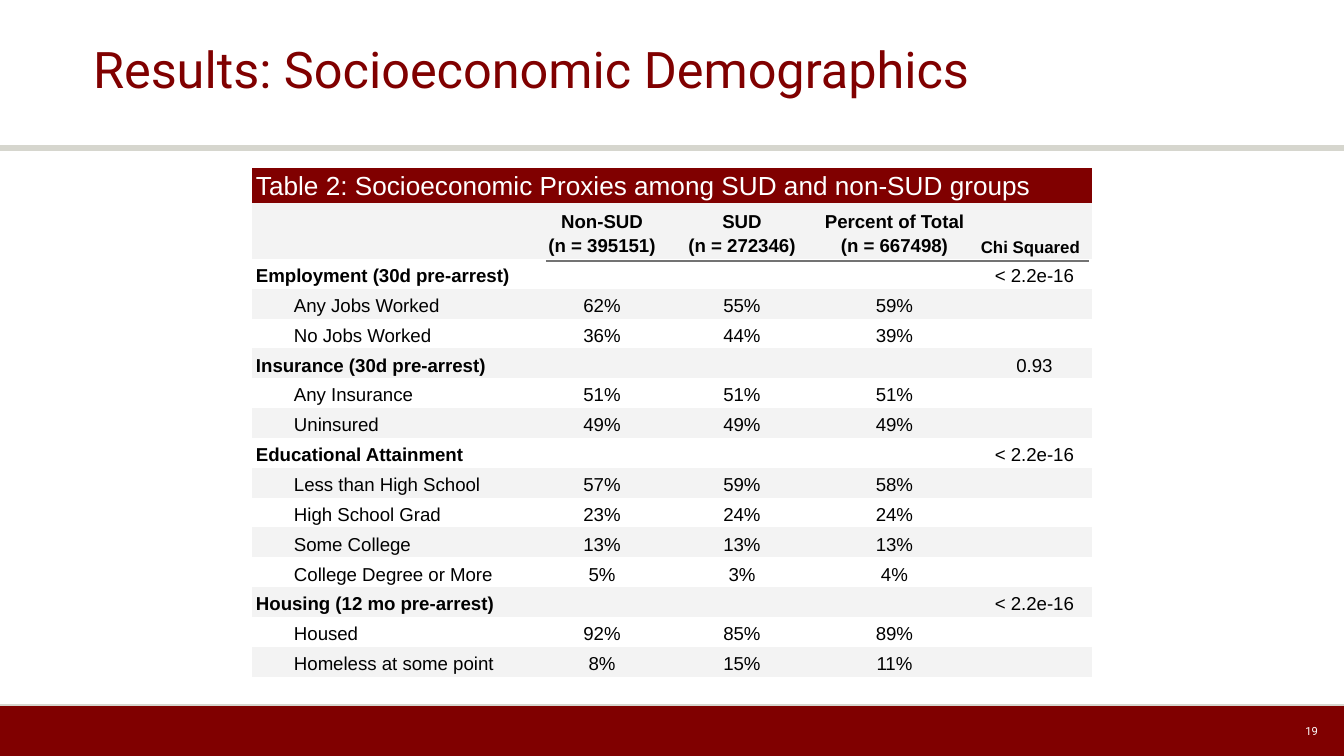
from lxml import etree
from pptx import Presentation
from pptx.dml.color import RGBColor
from pptx.enum.shapes import MSO_CONNECTOR, MSO_SHAPE
from pptx.enum.text import MSO_ANCHOR, PP_ALIGN
from pptx.oxml.ns import qn
from pptx.util import Emu, Pt

STRAIGHT = MSO_CONNECTOR.STRAIGHT
RECTANGLE = MSO_SHAPE.RECTANGLE
MIDDLE, BOTTOM = MSO_ANCHOR.MIDDLE, MSO_ANCHOR.BOTTOM
LEFT, CENTER, RIGHT = PP_ALIGN.LEFT, PP_ALIGN.CENTER, PP_ALIGN.RIGHT

MAROON = RGBColor(0x80, 0x00, 0x00)
STONE = RGBColor(0xD6, 0xD6, 0xCE)
GRAY = RGBColor(0x73, 0x73, 0x73)
BAND = RGBColor(0xF3, 0xF3, 0xF3)
WHITE = RGBColor(0xFF, 0xFF, 0xFF)
BLACK = RGBColor(0x00, 0x00, 0x00)

WIDTH, HEIGHT = 1344, 756
EMU_PER_PX = 9144000 / WIDTH
NO_STYLE = "{2D5ABB26-0587-4C30-8999-92F81FD0307C}"

COLUMN_WIDTHS = [38, 242, 140, 140, 165, 115]
CAPTION_HEIGHT, HEADER_HEIGHT = 35, 53
CAPTION = "Table 2: Socioeconomic Proxies among SUD and non-SUD groups"
GROUP_HEADERS = [
    ("Non-SUD", "(n = 395151)"),
    ("SUD", "(n = 272346)"),
    ("Percent of Total", "(n = 667498)"),
]
SECTIONS = [
    ("Employment (30d pre-arrest)", "< 2.2e-16", [
        ("Any Jobs Worked", "62%", "55%", "59%"),
        ("No Jobs Worked", "36%", "44%", "39%"),
    ]),
    ("Insurance (30d pre-arrest)", "0.93", [
        ("Any Insurance", "51%", "51%", "51%"),
        ("Uninsured", "49%", "49%", "49%"),
    ]),
    ("Educational Attainment", "< 2.2e-16", [
        ("Less than High School", "57%", "59%", "58%"),
        ("High School Grad", "23%", "24%", "24%"),
        ("Some College", "13%", "13%", "13%"),
        ("College Degree or More", "5%", "3%", "4%"),
    ]),
    ("Housing (12 mo pre-arrest)", "< 2.2e-16", [
        ("Housed", "92%", "85%", "89%"),
        ("Homeless at some point", "8%", "15%", "11%"),
    ]),
]


def px(length):
    return Emu(round(length * EMU_PER_PX))


def add_line(slide, left, right, y, color, weight):
    line = slide.shapes.add_connector(STRAIGHT, px(left), px(y), px(right), px(y))
    line.line.color.rgb = color
    line.line.width = Pt(weight)
    etree.SubElement(line._element.spPr, qn("a:effectLst"))


def write(paragraph, text, size, color, font="Arial", bold=False, align=LEFT, spacing=1.0):
    paragraph.alignment = align
    paragraph.line_spacing = spacing
    run = paragraph.add_run()
    run.text = text
    run.font.size = Pt(size)
    run.font.name = font
    run.font.bold = bold
    run.font.color.rgb = color


def set_margins(box, side, end):
    box.margin_left = box.margin_right = px(side)
    box.margin_top = box.margin_bottom = px(end)


def add_label(slide, box, text, size, color, align=LEFT, side=0, spacing=1.0):
    """Roboto text, centred vertically in its box."""
    frame = slide.shapes.add_textbox(*map(px, box)).text_frame
    frame.word_wrap = True
    frame.vertical_anchor = MIDDLE
    set_margins(frame, side, 5)
    write(frame.paragraphs[0], text, size, color, "Roboto", align=align, spacing=spacing)


def add_heading(slide, left, top, width, height):
    add_label(slide, (left + 93, top, width - 186, height - 3),
              "Results: Socioeconomic Demographics", 27, MAROON, spacing=0.9)
    add_line(slide, left, left + width, top + height, STONE, 3)


def add_footer(slide, left, top, width, height):
    bar = slide.shapes.add_shape(RECTANGLE, *map(px, (left, top, width, height)))
    bar.shadow.inherit = False
    bar.fill.solid()
    bar.fill.fore_color.rgb = MAROON
    bar.line.fill.background()
    add_line(slide, left, left + width, top, STONE, 0.75)
    add_label(slide, (left + width - 395, top + 6, 379, 40), "19", 6, WHITE, RIGHT, side=10)


def fill_cell(cell, *lines, size=10, bold=False, align=LEFT):
    """Write the lines as paragraphs at the cell's foot."""
    for number, text in enumerate(lines):
        frame = cell.text_frame
        paragraph = frame.add_paragraph() if number else frame.paragraphs[0]
        write(paragraph, text, size, BLACK, bold=bold, align=align, spacing=1.15)


def prepare_cell(cell, color):
    cell.fill.solid()
    cell.fill.fore_color.rgb = color
    cell.vertical_anchor = BOTTOM
    set_margins(cell, 4, 2)
    # Keeps empty cells from stretching their row
    end = etree.SubElement(cell.text_frame.paragraphs[0]._p, qn("a:endParaRPr"))
    end.set("sz", "1000")


def add_demographics_table(slide, left, top):
    body_rows = sum(1 + len(items) for _, _, items in SECTIONS)
    heights = [CAPTION_HEIGHT, HEADER_HEIGHT] + [29 + i % 2 for i in range(body_rows)]
    width = sum(COLUMN_WIDTHS)
    table = slide.shapes.add_table(
        len(heights), len(COLUMN_WIDTHS),
        px(left), px(top), px(width), px(sum(heights))).table
    table.first_row = table.horz_banding = False
    table._tbl.tblPr.find(qn("a:tableStyleId")).text = NO_STYLE

    for column, column_width in zip(table.columns, COLUMN_WIDTHS):
        column.width = px(column_width)
    for index, (row, height) in enumerate(zip(table.rows, heights)):
        row.height = px(height)
        color = MAROON if index == 0 else BAND if index % 2 else WHITE
        for cell in row.cells:
            prepare_cell(cell, color)

    table.cell(0, 0).merge(table.cell(0, 5))
    write(table.cell(0, 0).text_frame.paragraphs[0], CAPTION, 14, WHITE)
    for column, header in enumerate(GROUP_HEADERS, 2):
        fill_cell(table.cell(1, column), *header, bold=True, align=CENTER)
    fill_cell(table.cell(1, 5), "Chi Squared", size=9, bold=True)

    row = 2
    for section, chi_squared, items in SECTIONS:
        table.cell(row, 0).merge(table.cell(row, 1))
        fill_cell(table.cell(row, 0), section, bold=True)
        fill_cell(table.cell(row, 5), chi_squared, size=10 if row > 2 else 10, align=CENTER)
        for row, (label, *shares) in enumerate(items, row + 1):
            fill_cell(table.cell(row, 1), label)
            for column, share in enumerate(shares, 2):
                fill_cell(table.cell(row, column), share, align=CENTER)
        row += 1

    add_line(slide, left + 294, left + width - 3,
             top + CAPTION_HEIGHT + HEADER_HEIGHT + 5, GRAY, 0.75)


def main():
    deck = Presentation()
    deck.slide_width, deck.slide_height = px(WIDTH), px(HEIGHT)
    slide = deck.slides.add_slide(deck.slide_layouts[6])
    add_heading(slide, 0, 0, WIDTH, 148)
    add_footer(slide, 0, 705, WIDTH, 51)
    add_demographics_table(slide, 252, 168)
    deck.save("out.pptx")


if __name__ == "__main__":
    main()
